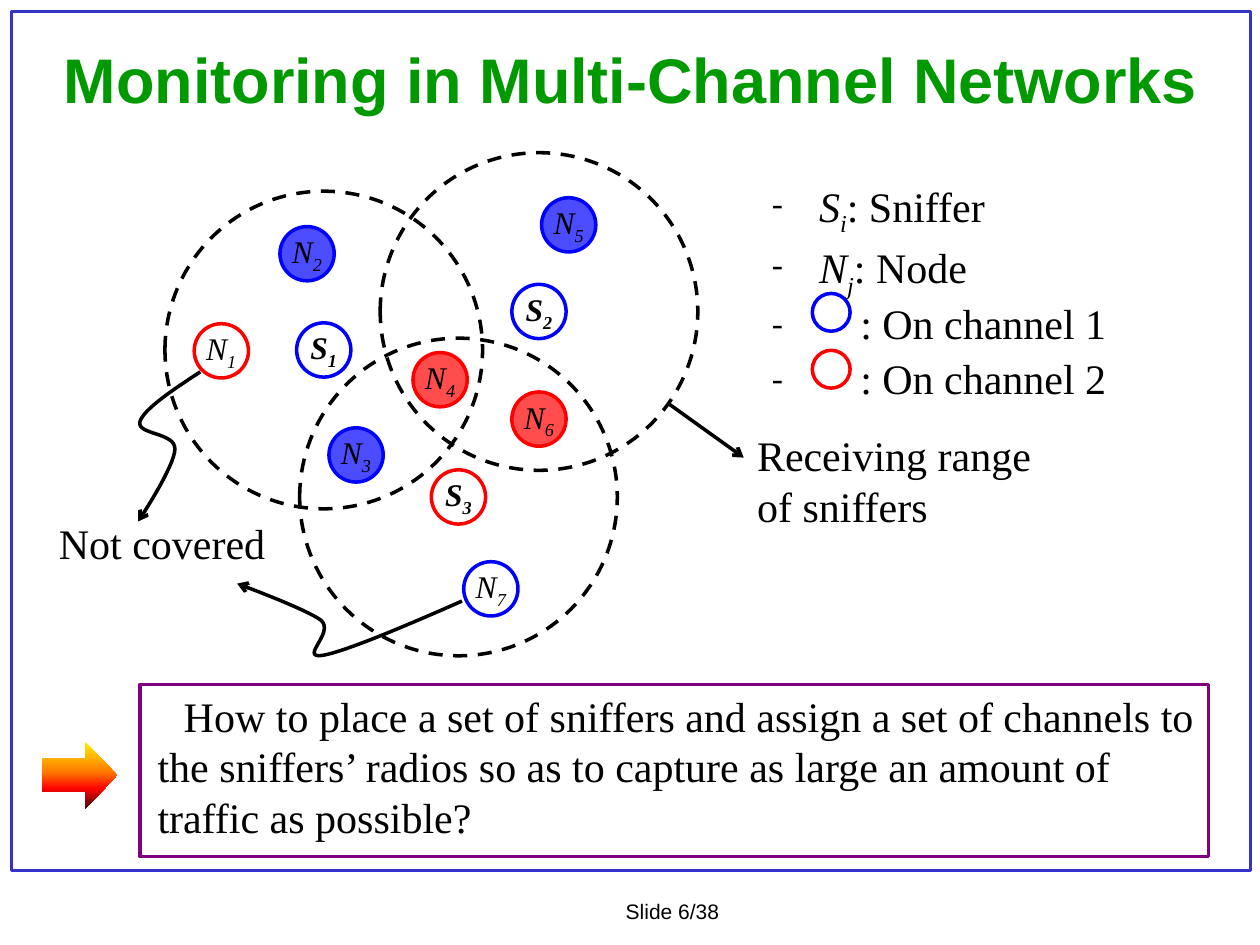
from lxml import etree
from pptx import Presentation
from pptx.dml.color import RGBColor
from pptx.enum import dml, shapes, text
from pptx.oxml import ns
from pptx.util import Pt

COLORS = {
    "frame": "3333CC", "title": "009900", "ink": "000000", "question": "800080",
    "channel 1": "0000FF", "channel 2": "FF0000",
}
FLAME = [(0, "FFF200"), (45, "FF7A00"), (70, "FF0300"), (100, "4D0808")]
SERIF, SANS = "Times New Roman", "Arial"
RANGE_SIZE, NODE_SIZE, KEY_SIZE = 181.5, 31, 21.6

SNIFFERS = [
    ("1", 185, 200, "channel 1"), ("2", 308, 178, "channel 1"), ("3", 262, 284, "channel 2"),
]
NODES = [
    ("1", 126.5, 200.5, "channel 2", False), ("2", 175.5, 145, "channel 1", True),
    ("3", 203.5, 260, "channel 1", True), ("4", 251.5, 217, "channel 2", True),
    ("5", 325, 128.5, "channel 1", True), ("6", 308, 239.5, "channel 2", True),
    ("7", 280.5, 336.5, "channel 1", False),
]
LEGEND = [
    (27, "S", "i", ": Sniffer"), (27, "N", "j", ": Node"),
    (50.5, "", "", ": On channel 1"), (50.5, "", "", ": On channel 2"),
]
UNCOVERED_PATHS = [
    [(114.5, 212.5), (98.5, 223), (82, 234), (80, 241), (78, 248.5), (100, 247), (100, 256.5),
     (100, 266.5), (79, 298), (79, 298)],
    [(264, 343.5), (231, 358), (198, 372), (184.5, 374.5), (170.5, 376.5), (191.5, 361.5),
     (183.5, 354.5), (175, 348), (135.5, 333.5), (135.5, 333.5)],
]


def add_element(parent, tag, **attributes):
    """Append an XML child with the given attributes."""
    child = etree.SubElement(parent, ns.qn(tag))
    for key, value in attributes.items():
        child.set(key, str(value))
    return child


def write(paragraph, words, size=24, font=SERIF, color="ink", bold=False, italic=False, sub=False):
    """Append a formatted run to a paragraph."""
    run = paragraph.add_run()
    run.text = words
    run.font.size, run.font.name = Pt(size), font
    run.font.bold, run.font.italic = bold, italic
    run.font.color.rgb = RGBColor.from_string(COLORS[color])
    if sub:
        run.font._element.set("baseline", "-25000")


def add_outline(slide, kind, left, top, width, height, color, weight=2):
    """Draw an unfilled preset shape."""
    outline = slide.shapes.add_shape(kind, Pt(left), Pt(top), Pt(width), Pt(height))
    outline.shadow.inherit = False
    outline.fill.background()
    outline.line.color.rgb = RGBColor.from_string(COLORS[color])
    outline.line.width = Pt(weight)
    return outline


def add_circle(slide, x, y, size, color):
    """Draw a circle around a centre."""
    return add_outline(slide, shapes.MSO_SHAPE.OVAL, x - size / 2, y - size / 2, size, size, color)


def add_device(slide, letter, index, x, y, channel, filled=False, bold=False):
    """Draw a sniffer or node with its subscripted name."""
    device = add_circle(slide, x, y, NODE_SIZE, channel)
    if filled:
        device.fill.solid()
        device.fill.fore_color.rgb = RGBColor.from_string(COLORS[channel])
        tint = device._element.spPr.find(ns.qn("a:solidFill"))[0]
        add_element(tint, "a:alpha", val=70000)
    frame = device.text_frame
    frame.word_wrap = False
    frame.vertical_anchor = text.MSO_ANCHOR.MIDDLE
    name = frame.paragraphs[0]
    name.alignment = text.PP_ALIGN.CENTER
    write(name, letter, size=18, bold=bold, italic=True)
    write(name, index, size=18, bold=bold, italic=True, sub=True)


def add_label(slide, words, left, top, width, height, **style):
    """Place a wrapping text box and return its frame."""
    frame = slide.shapes.add_textbox(Pt(left), Pt(top), Pt(width), Pt(height)).text_frame
    frame.word_wrap = True
    if words:
        write(frame.paragraphs[0], words, **style)
    return frame


def style_arrow(arrow):
    """Give a line its black stroke and open arrowhead."""
    arrow.line.color.rgb = RGBColor.from_string(COLORS["ink"])
    arrow.line.width = Pt(2)
    add_element(arrow.line._get_or_add_ln(), "a:tailEnd", type="arrow")


def add_curve(slide, controls, steps=16):
    """Trace a chain of cubic curves ending in an arrowhead."""
    points = []
    for start in range(0, len(controls) - 1, 3):
        segment = controls[start:start + 4]
        for step in range(1, steps + 1):
            t = step / steps
            weights = ((1 - t) ** 3, 3 * t * (1 - t) ** 2, 3 * t * t * (1 - t), t ** 3)
            points.append(tuple(
                Pt(sum(w * p[axis] for w, p in zip(weights, segment))) for axis in (0, 1)))
    builder = slide.shapes.build_freeform(Pt(controls[0][0]), Pt(controls[0][1]))
    builder.add_line_segments(points, close=False)
    curve = builder.convert_to_shape()
    curve.shadow.inherit = False
    curve.fill.background()
    style_arrow(curve)


def add_legend(slide):
    """List the symbols with dash bullets and channel circles."""
    frame = add_label(slide, "", 434, 100, 263.5, 139)
    for row, (indent, letter, index, meaning) in enumerate(LEGEND):
        entry = frame.add_paragraph() if row else frame.paragraphs[0]
        properties = entry._p.get_or_add_pPr()
        properties.set("marL", str(Pt(indent)))
        properties.set("indent", str(-Pt(indent)))
        entry.line_spacing = 0.9
        if row:
            entry.space_before = Pt(5.5)
        add_element(properties, "a:buSzPct", val=80000)
        add_element(properties, "a:buFont", typeface=SERIF)
        add_element(properties, "a:buChar", char="-")
        if letter:
            write(entry, letter, italic=True)
            write(entry, index, italic=True, sub=True)
        write(entry, meaning)
    for y, channel in ((178.5, "channel 1"), (211, "channel 2")):
        add_circle(slide, 475, y, KEY_SIZE, channel)


def add_question(slide):
    """Draw the boxed question with its gradient arrow."""
    pointer = add_outline(slide, shapes.MSO_SHAPE.RIGHT_ARROW, 24, 424, 43, 38, "ink")
    pointer.adjustments[0], pointer.adjustments[1] = 0.5, 0.48
    pointer.line.fill.background()
    pointer.fill.gradient()
    pointer.fill.gradient_angle = 270
    stops = pointer._element.spPr.find(ns.qn("a:gradFill")).find(ns.qn("a:gsLst"))
    for stop in list(stops):
        stops.remove(stop)
    for position, color in FLAME:
        add_element(add_element(stops, "a:gs", pos=position * 1000), "a:srgbClr", val=color)
    box = add_outline(slide, shapes.MSO_SHAPE.RECTANGLE, 80, 391, 610.5, 98.5, "question")
    frame = box.text_frame
    frame.word_wrap = True
    frame.vertical_anchor = text.MSO_ANCHOR.TOP
    frame.margin_left = Pt(10)
    question = frame.paragraphs[0]
    question.alignment = text.PP_ALIGN.LEFT
    question._p.get_or_add_pPr().set("indent", str(Pt(15)))
    write(question, "How to place a set of sniffers and assign a set of channels to the sniffers’ "
                    "radios so as to capture as large an amount of traffic as possible?")


def add_title(slide, words):
    """Place and format the title."""
    title = slide.shapes.title
    title.left, title.top, title.width, title.height = Pt(13), Pt(17.5), Pt(695), Pt(54.5)
    title.text_frame.vertical_anchor = text.MSO_ANCHOR.MIDDLE
    heading = title.text_frame.paragraphs[0]
    heading.alignment = text.PP_ALIGN.CENTER
    write(heading, words, size=36, font=SANS, color="title", bold=True)


def main():
    """Build the slide and save it."""
    deck = Presentation()
    deck.slide_width, deck.slide_height = Pt(720), Pt(540)
    slide = deck.slides.add_slide(deck.slide_layouts[5])
    add_outline(slide, shapes.MSO_SHAPE.RECTANGLE, 6.5, 6.5, 708, 491, "frame", 1.5)
    add_label(slide, "Slide 6/38", 350.5, 510, 86, 21.5, size=12, font=SANS)
    add_title(slide, "Monitoring in Multi-Channel Networks")
    for index, x, y, channel in SNIFFERS:
        coverage = add_circle(slide, x, y, RANGE_SIZE, "ink")
        coverage.line.dash_style = dml.MSO_LINE.DASH
        add_device(slide, "S", index, x, y, channel, bold=True)
    for node in NODES:
        add_device(slide, "N", *node)
    add_question(slide)
    add_legend(slide)
    add_label(slide, "Receiving range of sniffers", 425.5, 242, 176.5, 65.5)
    add_label(slide, "Not covered", 26.5, 292, 134.5, 36)
    for controls in UNCOVERED_PATHS:
        add_curve(slide, controls)
    pointer = slide.shapes.add_connector(
        shapes.MSO_CONNECTOR.STRAIGHT, Pt(382.5), Pt(231), Pt(425), Pt(261.5))
    style_arrow(pointer)
    add_element(pointer._element.spPr, "a:effectLst")
    deck.save("out.pptx")


if __name__ == "__main__":
    main()
